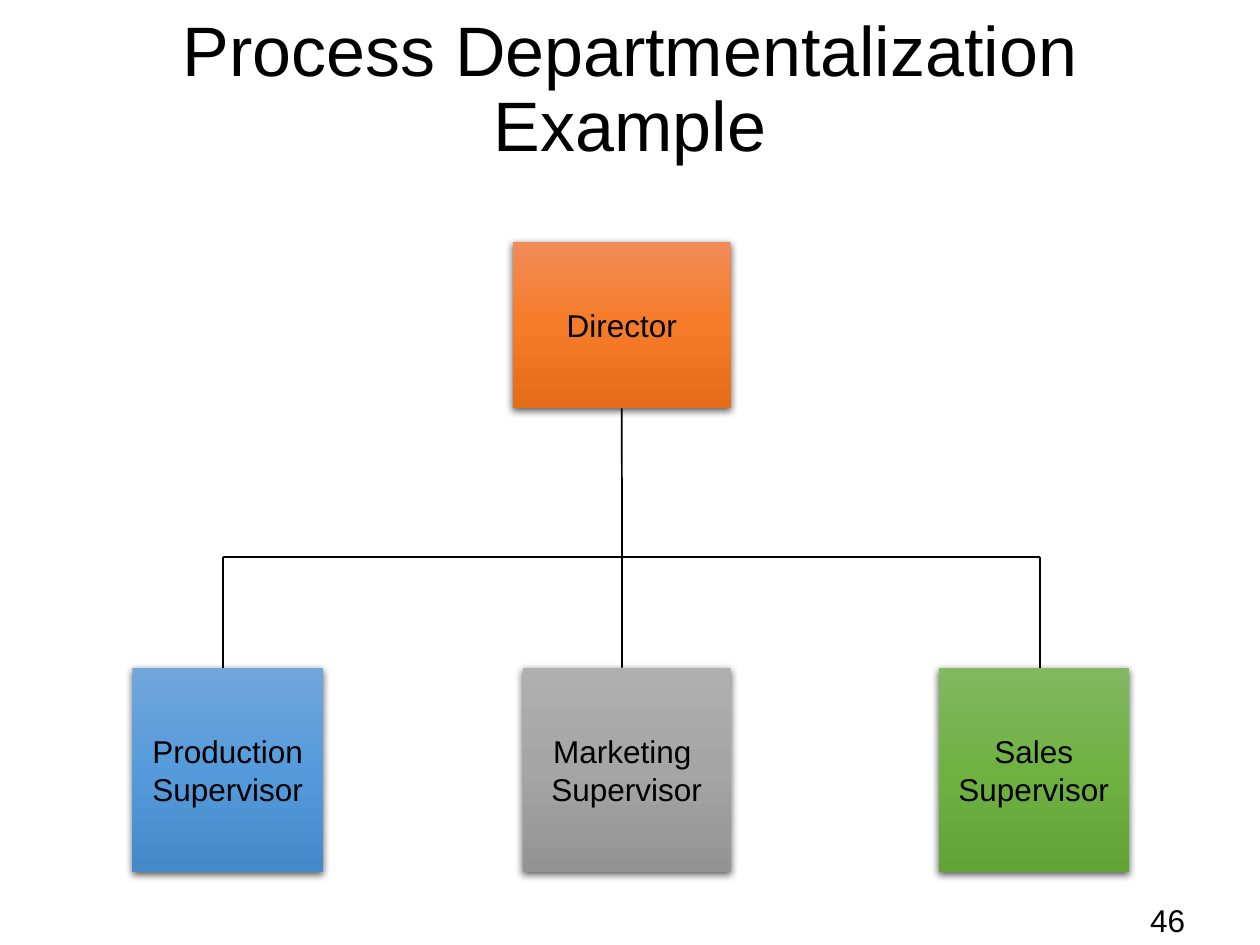
from lxml import etree
from pptx import Presentation
from pptx.dml.color import RGBColor
from pptx.enum.shapes import MSO_CONNECTOR, MSO_SHAPE
from pptx.enum.text import MSO_ANCHOR, PP_ALIGN
from pptx.oxml.ns import qn
from pptx.util import Cm, Pt

STRAIGHT = MSO_CONNECTOR.STRAIGHT
PROCESS = MSO_SHAPE.FLOWCHART_PROCESS
TOP, MIDDLE = MSO_ANCHOR.TOP, MSO_ANCHOR.MIDDLE
CENTER, RIGHT = PP_ALIGN.CENTER, PP_ALIGN.RIGHT
BOTTOM_SIDE = 2

FONT = "Arial"
BLACK = RGBColor(0x00, 0x00, 0x00)
ORANGE = (RGBColor(0xF1, 0x8C, 0x57), RGBColor(0xF6, 0x7B, 0x28), RGBColor(0xE5, 0x6C, 0x19))
BLUE = (RGBColor(0x71, 0xA6, 0xDB), RGBColor(0x55, 0x9B, 0xDB), RGBColor(0x44, 0x8A, 0xCA))
GRAY = (RGBColor(0xAF, 0xAF, 0xAF), RGBColor(0xA5, 0xA5, 0xA5), RGBColor(0x93, 0x93, 0x93))
GREEN = (RGBColor(0x81, 0xB8, 0x61), RGBColor(0x6F, 0xB2, 0x42), RGBColor(0x62, 0xA3, 0x36))

SUPERVISORS = [
    ("Production\nSupervisor", 0, 3.84, BLUE, 1.83),
    ("Marketing \nSupervisor", 7.87, 4.19, GRAY, 9.87),
    ("Sales\nSupervisor", 16.25, 3.84, GREEN, 18.29),
]


def write_text(shape, text, size=18, align=CENTER, anchor=MIDDLE, wrap=True, spacing=1.0):
    """Fill a shape with one paragraph per line of text."""
    frame = shape.text_frame
    frame.word_wrap = wrap
    frame.vertical_anchor = anchor
    frame.text = text
    for para in frame.paragraphs:
        para.alignment = align
        para.line_spacing = spacing
        para.font.name = FONT
        para.font.size = Pt(size)
        para.font.color.rgb = BLACK


def add_text_box(page, text, left, top, width, height, **text_format):
    """Place a text box measured in centimetres."""
    box = page.shapes.add_textbox(Cm(left), Cm(top), Cm(width), Cm(height))
    write_text(box, text, **text_format)


def shade(shape, colors):
    """Give a shape an even vertical gradient from the first colour to the last."""
    shape.fill.gradient()
    shape.fill.gradient_angle = 270
    stops = shape._element.spPr.find(qn("a:gradFill")).find(qn("a:gsLst"))
    for stop in list(stops):
        stops.remove(stop)
    for index, color in enumerate(colors):
        position = 100000 * index // (len(colors) - 1)
        stop = etree.SubElement(stops, qn("a:gs"), pos=str(position))
        etree.SubElement(stop, qn("a:srgbClr"), val=str(color))


def cast_shadow(shape):
    """Give a shape a soft shadow straight below it."""
    shape.shadow.inherit = False
    effects = shape._element.spPr.find(qn("a:effectLst"))
    shadow = etree.SubElement(
        effects, qn("a:outerShdw"), blurRad=str(Pt(4.5)), dist=str(Pt(1.5)),
        dir="5400000", algn="ctr", rotWithShape="0")
    color = etree.SubElement(shadow, qn("a:srgbClr"), val=str(BLACK))
    etree.SubElement(color, qn("a:alpha"), val="63000")


def add_role(page, text, left, top, width, height, colors):
    """Place one box of the organization chart."""
    role = page.shapes.add_shape(PROCESS, Cm(left), Cm(top), Cm(width), Cm(height))
    shade(role, colors)
    role.line.fill.background()
    cast_shadow(role)
    write_text(role, text, wrap=False)
    return role


def add_line(page, start_x, start_y, end_x, end_y):
    """Draw a thin black line without a shadow."""
    line = page.shapes.add_connector(STRAIGHT, Cm(start_x), Cm(start_y), Cm(end_x), Cm(end_y))
    line.line.color.rgb = BLACK
    line.line.width = Pt(1)
    etree.SubElement(line._element.spPr, qn("a:effectLst"))
    return line


def add_organization_chart(page, left, top):
    """Place the director, the supervisors and the lines between them."""
    bus_y, row_y = top + 6.35, top + 8.58
    first_x, trunk_x, last_x = [left + supervisor[-1] for supervisor in SUPERVISORS]
    trunk = add_line(page, trunk_x, top + 3.35, trunk_x, row_y)
    add_line(page, first_x, bus_y, last_x, bus_y)
    for drop_x in (first_x, last_x):
        add_line(page, drop_x, bus_y, drop_x, row_y)
    director = add_role(page, "Director", left + 7.67, top, 4.39, 3.35, ORANGE)
    trunk.begin_connect(director, BOTTOM_SIDE)
    for text, offset, width, colors, _ in SUPERVISORS:
        add_role(page, text, left + offset, row_y, width, 4.11, colors)


def main():
    """Build and save the deck."""
    deck = Presentation()
    deck.slide_width, deck.slide_height = Cm(25.4), Cm(19.05)
    page = deck.slides.add_slide(deck.slide_layouts[6])
    add_text_box(page, "46", 20.96, 18.03, 3.18, 1.02, align=RIGHT, anchor=TOP)
    add_text_box(page, "Process Departmentalization Example", 1.27, 0, 22.86, 3.68,
                 size=40, spacing=0.9)
    add_organization_chart(page, 2.67, 4.88)
    deck.save("out.pptx")


if __name__ == "__main__":
    main()
